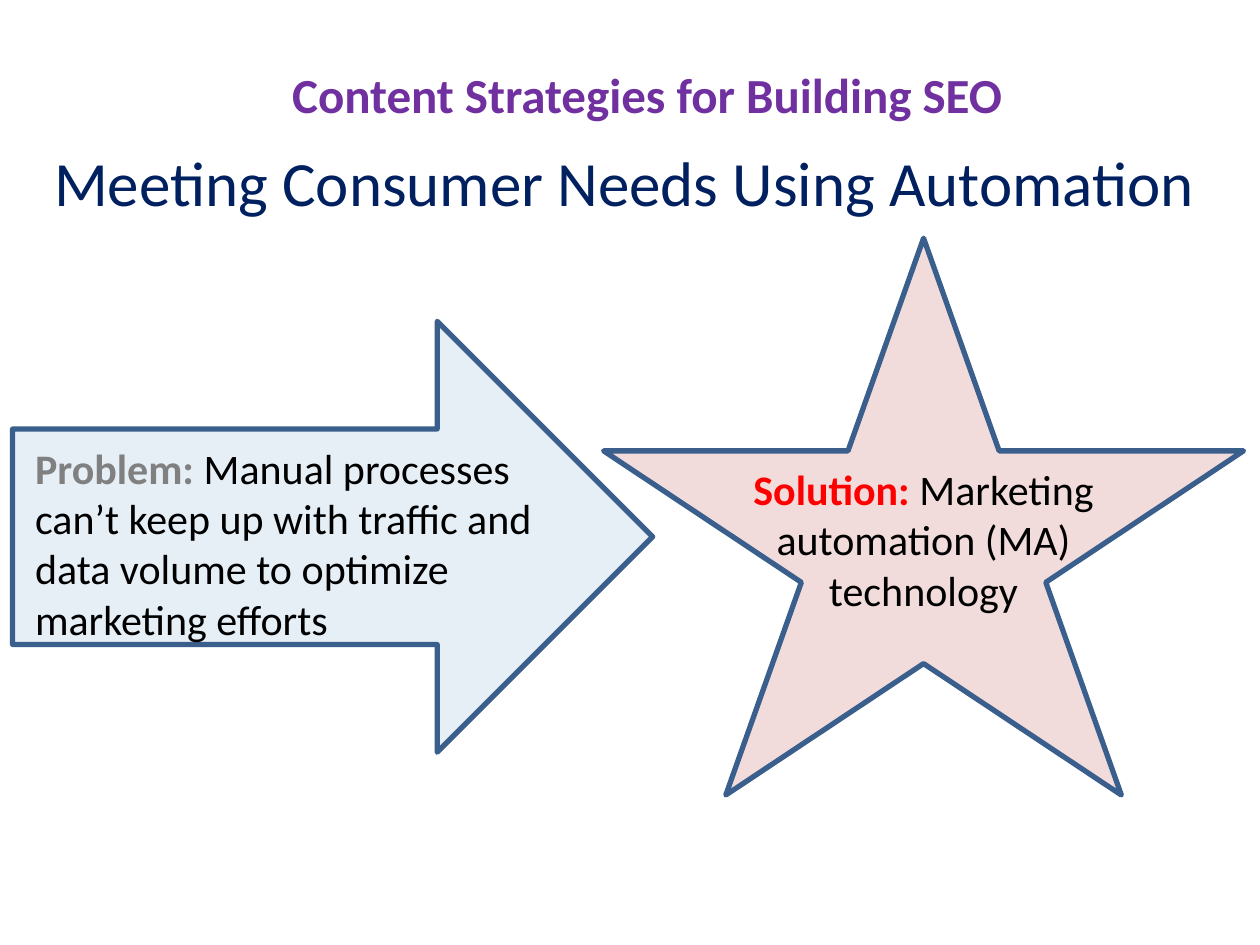
from pptx import Presentation
from pptx.dml.color import RGBColor
from pptx.enum import shapes, text
from pptx.util import Inches, Pt

THEME = {
    "font": "Calibri",
    "outline": "3A5F8C", "outline_width": 3,
    "star": "F2DCDB", "arrow": "E6EEF6",
    "topic": "7030A0", "headline": "002060",
    "problem": "808080", "solution": "FF0000", "body": "000000",
    "topic_size": 28, "headline_size": 36, "body_size": 24,
}
LEFT, CENTER = text.PP_ALIGN.LEFT, text.PP_ALIGN.CENTER

# preset, fill, (left, top, width, height), from back to front
FIGURES = [
    (shapes.MSO_SHAPE.STAR_5_POINT, "star", (4.79, 1.89, 5.08, 4.42)),
    (shapes.MSO_SHAPE.RIGHT_ARROW, "arrow", (0.1, 2.55, 5.08, 3.42)),
]

# A run is (wording, colour, bold).
HEADLINE = {
    "at": (0.33, 1.09, 9.34, 0.71), "align": LEFT, "size": "headline_size", "wrap": False,
    "runs": [("Meeting Consumer Needs Using Automation", "headline", False)],
}
CAPTIONS = [
    {"at": (1.3, 0.46, 7.67, 0.98), "align": CENTER, "size": "topic_size", "wrap": True,
     "runs": [("Content Strategies for Building SEO", "topic", True)]},
    {"at": (0.18, 3.46, 4.44, 1.72), "align": LEFT, "size": "body_size", "wrap": True,
     "runs": [("Problem: ", "problem", True),
              ("Manual processes can’t keep up with traffic and data volume "
               "to optimize marketing efforts", "body", False)]},
    {"at": (5.58, 3.63, 3.5, 1.62), "align": CENTER, "size": "body_size", "wrap": True,
     "runs": [("Solution: ", "solution", True),
              ("Marketing automation (MA) technology", "body", False)]},
]


def color(role):
    return RGBColor.from_string(THEME[role])


def box(at):
    return [Inches(length) for length in at]


def add_figure(slide, preset, fill, at):
    figure = slide.shapes.add_shape(preset, *box(at))
    figure.shadow.inherit = False
    figure.fill.solid()
    figure.fill.fore_color.rgb = color(fill)
    figure.line.color.rgb = color("outline")
    figure.line.width = Pt(THEME["outline_width"])


def write(frame, caption):
    frame_format = {
        "word_wrap": caption["wrap"],
        "auto_size": text.MSO_AUTO_SIZE.SHAPE_TO_FIT_TEXT,
        "vertical_anchor": text.MSO_ANCHOR.TOP,
    }
    for name, value in frame_format.items():
        setattr(frame, name, value)
    paragraph = frame.paragraphs[0]
    paragraph.alignment = caption["align"]
    for wording, role, bold in caption["runs"]:
        run = paragraph.add_run()
        run.text = wording
        run.font.color.rgb = color(role)
        run_format = {"name": THEME["font"], "size": Pt(THEME[caption["size"]]), "bold": bold}
        for name, value in run_format.items():
            setattr(run.font, name, value)


def main():
    deck = Presentation()
    deck.slide_width, deck.slide_height = Inches(10), Inches(7.5)
    slide = deck.slides.add_slide(deck.slide_layouts.get_by_name("Title Only"))

    title = slide.shapes.title
    title.left, title.top, title.width, title.height = box(HEADLINE["at"])
    write(title.text_frame, HEADLINE)

    for figure in FIGURES:
        add_figure(slide, *figure)
    for caption in CAPTIONS:
        write(slide.shapes.add_textbox(*box(caption["at"])).text_frame, caption)

    deck.save("out.pptx")


if __name__ == "__main__":
    main()
